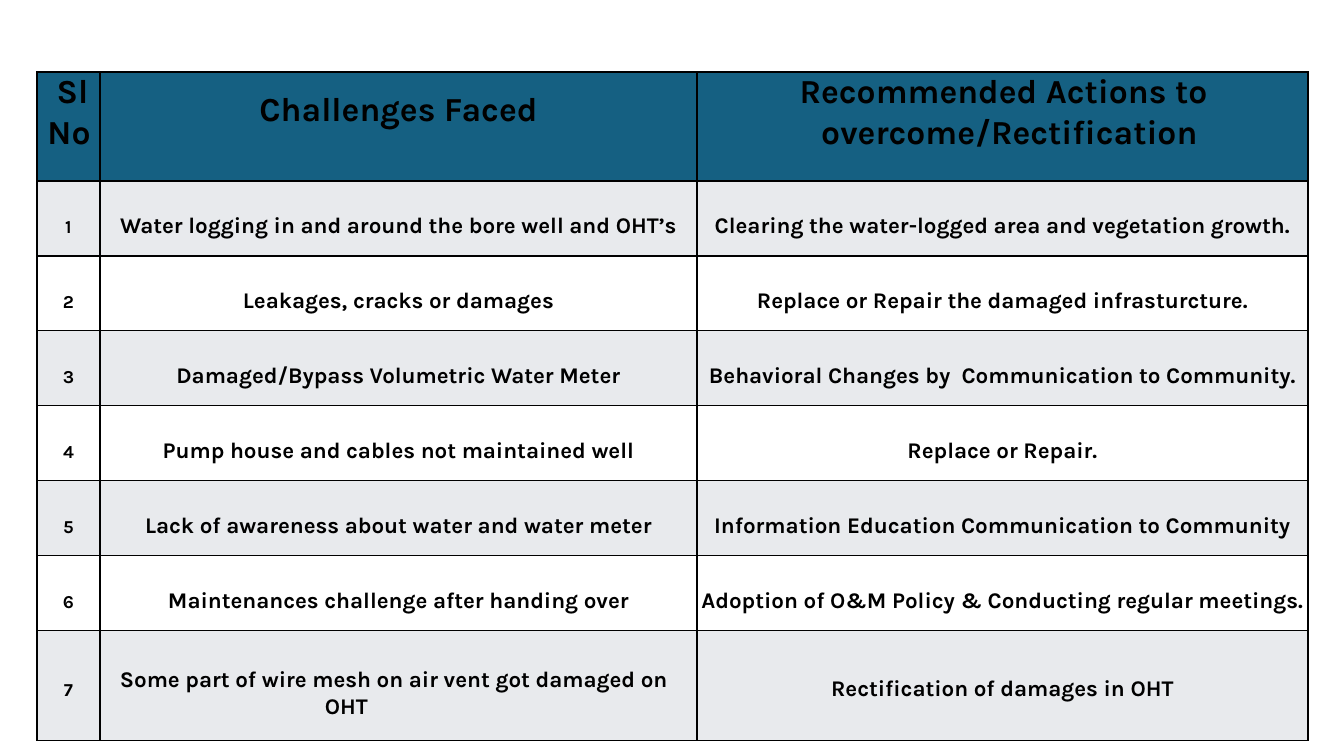
from lxml.etree import SubElement
from pptx import Presentation
from pptx.dml.color import RGBColor
from pptx.enum.text import MSO_ANCHOR, PP_ALIGN
from pptx.oxml.ns import qn
from pptx.util import Pt

SLIDE_WIDTH, SLIDE_HEIGHT = 1344, 756
SCALE = 12192000 / SLIDE_WIDTH
FONT = "Karla"
COLORS = {"header": "156082", "odd": "E8EAED", "even": "FFFFFF", "ink": "000000"}
COLUMN_WIDTHS = [63, 597, 611]
ROW_HEIGHTS = [109] + [75] * 6 + [110]

HEADINGS = [
    ("Sl No", {"left": 6, "right": 5, "first": 7, "leading": 1.03}),
    ("Challenges Faced", {"top": 19}),
    ("Recommended Actions to overcome/Rectification",
     {"left": 88, "right": 74, "first": -12, "leading": 1.03}),
]
ISSUES = [
    ("Water logging in and around the bore well and OHT’s",
     "Clearing the water-logged area and vegetation growth."),
    ("Leakages, cracks or damages",
     "Replace or Repair the damaged infrasturcture."),
    ("Damaged/Bypass Volumetric Water Meter",
     "Behavioral Changes by  Communication to Community."),
    ("Pump house and cables not maintained well", "Replace or Repair."),
    ("Lack of awareness about water and water meter",
     "Information Education Communication to Community"),
    ("Maintenances challenge after handing over",
     "Adoption of O&M Policy & Conducting regular meetings."),
    ("Some part of wire mesh on air vent got damaged on OHT",
     "Rectification of damages in OHT"),
]
NUMBER = {"size": 13, "spacing": -50, "top": 19, "anchor": MSO_ANCHOR.MIDDLE}
BODY = {"size": 16, "top": 15, "anchor": MSO_ANCHOR.MIDDLE}
LAST_ROW = [
    {"top": 10},
    {"top": 14, "left": 225, "first": -205, "leading": 1.05, "align": PP_ALIGN.LEFT},
    {"top": 6},
]


def px(length):
    return round(length * SCALE)


def write_text(cell, text, size=24, bold=True, color="ink", align=PP_ALIGN.CENTER,
               anchor=MSO_ANCHOR.TOP, top=0, left=0, right=0, first=0,
               leading=None, spacing=0):
    cell.margin_left = cell.margin_right = cell.margin_bottom = 0
    cell.margin_top = px(top)
    cell.vertical_anchor = anchor
    para = cell.text_frame.paragraphs[0]
    para.alignment = align
    if leading:
        para.line_spacing = leading
    properties = para._p.get_or_add_pPr()
    for key, length in (("marL", left), ("marR", right), ("indent", first)):
        properties.set(key, str(px(length)))
    span = para.add_run()
    span.text = text
    span.font.name = FONT
    span.font.size = Pt(size)
    span.font.bold = bold
    span.font.color.rgb = RGBColor.from_string(COLORS[color])
    span.font._element.set("spc", str(spacing))


def style_cell(cell, fill):
    properties = cell._tc.get_or_add_tcPr()
    for side in ("a:lnL", "a:lnR", "a:lnT", "a:lnB"):
        line = SubElement(properties, qn(side), w=str(Pt(1)))
        solid = SubElement(line, qn("a:solidFill"))
        SubElement(solid, qn("a:srgbClr"), val=COLORS["ink"])
    cell.fill.solid()
    cell.fill.fore_color.rgb = RGBColor.from_string(COLORS[fill])


def table_rows():
    yield "header", HEADINGS
    for number, (challenge, action) in enumerate(ISSUES, 1):
        extras = LAST_ROW if number == len(ISSUES) else [{}] * 3
        texts = (str(number), challenge, action)
        formats = (NUMBER, BODY, BODY)
        cells = [(text, {**style, **extra})
                 for text, style, extra in zip(texts, formats, extras)]
        yield ("odd" if number % 2 else "even"), cells


def add_challenge_table(page, left, top):
    table = page.shapes.add_table(
        len(ROW_HEIGHTS), len(COLUMN_WIDTHS), px(left), px(top),
        px(sum(COLUMN_WIDTHS)), px(sum(ROW_HEIGHTS))).table
    table.first_row = table.horz_banding = False
    for column, width in zip(table.columns, COLUMN_WIDTHS):
        column.width = px(width)
    for row, height, (fill, contents) in zip(table.rows, ROW_HEIGHTS, table_rows()):
        row.height = px(height)
        for cell, (text, style) in zip(row.cells, contents):
            style_cell(cell, fill)
            write_text(cell, text, **style)


def main():
    deck = Presentation()
    deck.slide_width, deck.slide_height = px(SLIDE_WIDTH), px(SLIDE_HEIGHT)
    page = deck.slides.add_slide(deck.slide_layouts[6])
    add_challenge_table(page, 37, 72)
    deck.save("out.pptx")


if __name__ == "__main__":
    main()
